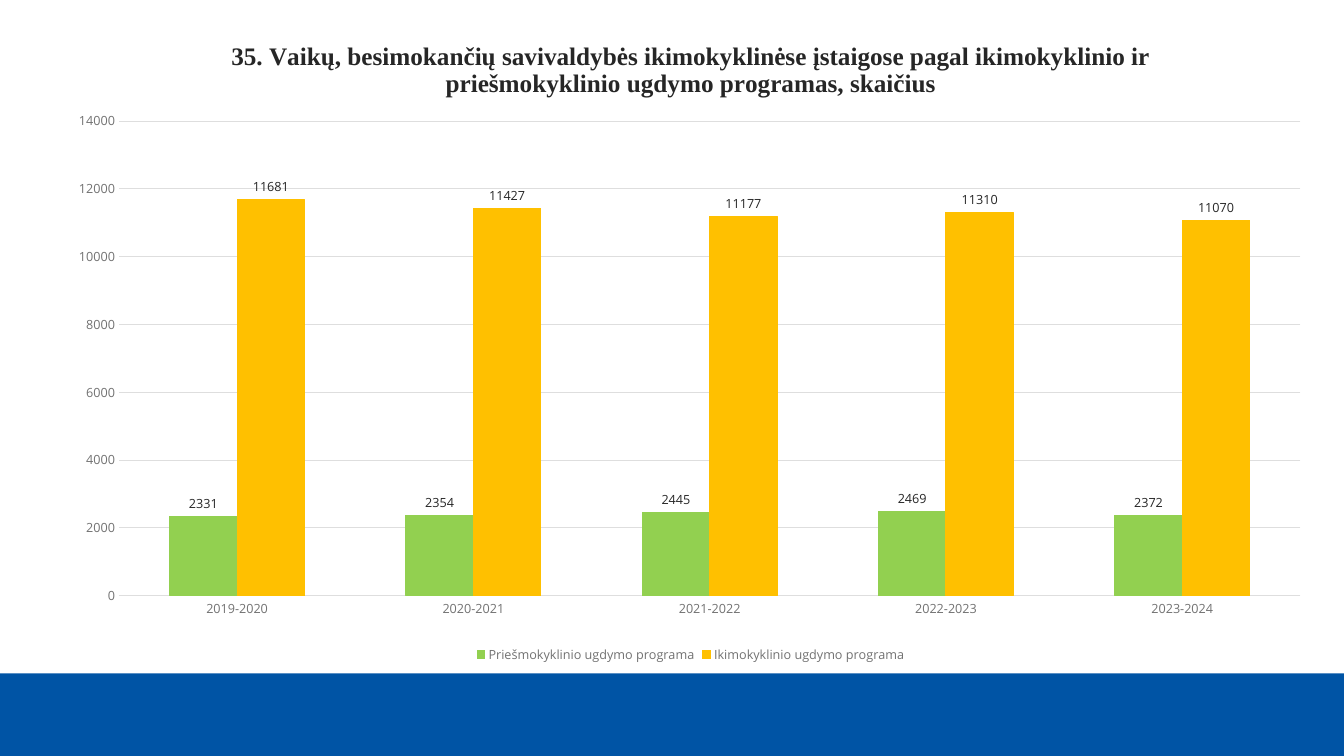
import pptx
import pptx.chart.data
import pptx.dml.color
import pptx.enum.chart
import pptx.enum.shapes
import pptx.oxml
import pptx.oxml.ns
import pptx.util

PX = 9144  # 100 px to the inch
PAGE_WIDTH, PAGE_HEIGHT = 1333, 750
BODY_FONT, TITLE_FONT = "Open Sans", "Times New Roman"
COLORS = {
    "band": "0054A5",
    "text": "262626",
    "muted": "727272",
    "grid": "DEDEDE",
    "preschool": "92D050",
    "nursery": "FFC000",
}
TITLE = ("35. Vaikų, besimokančių savivaldybės ikimokyklinėse įstaigose pagal "
         "ikimokyklinio ir priešmokyklinio ugdymo programas, skaičius")
YEARS = ["2019-2020", "2020-2021", "2021-2022", "2022-2023", "2023-2024"]
PROGRAMMES = [
    ("Priešmokyklinio ugdymo programa", "preschool", [2331, 2354, 2445, 2469, 2372]),
    ("Ikimokyklinio ugdymo programa", "nursery", [11681, 11427, 11177, 11310, 11070]),
]


def rgb(name):
    return pptx.dml.color.RGBColor.from_string(COLORS[name])


def to_emu(box):
    return [length * PX for length in box]


def style_font(font, size, color, name=BODY_FONT, bold=False):
    font.name, font.size, font.bold = name, pptx.util.Pt(size), bold
    font.color.rgb = rgb(color)


def style_line(line, color):
    line.color.rgb = rgb(color)
    line.width = pptx.util.Pt(0.75)


def place_plot(chart, x, y, w, h):
    """Fix the inner plot area at fractions of the chart box."""
    plot_area = chart.plots[0]._element.getparent()
    for old in plot_area.findall(pptx.oxml.ns.qn("c:layout")):
        plot_area.remove(old)
    plot_area.insert(0, pptx.oxml.parse_xml(
        f'<c:layout {pptx.oxml.ns.nsdecls("c")}><c:manualLayout>'
        '<c:layoutTarget val="inner"/><c:xMode val="edge"/><c:yMode val="edge"/>'
        f'<c:x val="{x}"/><c:y val="{y}"/><c:w val="{w}"/><c:h val="{h}"/>'
        '</c:manualLayout></c:layout>'))


def add_footer_band(page, box):
    band = page.shapes.add_shape(pptx.enum.shapes.MSO_SHAPE.RECTANGLE, *to_emu(box))
    band.shadow.inherit = False
    band.fill.solid()
    band.fill.fore_color.rgb = rgb("band")
    band.line.fill.background()


def style_axes(chart):
    for axis in (chart.category_axis, chart.value_axis):
        axis.major_tick_mark = axis.minor_tick_mark = pptx.enum.chart.XL_TICK_MARK.NONE
        style_font(axis.tick_labels.font, 9, "muted")
    style_line(chart.category_axis.format.line, "grid")
    values = chart.value_axis
    values.minimum_scale, values.maximum_scale, values.major_unit = 0, 14000, 2000
    values.format.line.fill.background()
    values.has_major_gridlines = True
    style_line(values.major_gridlines.format.line, "grid")


def add_programme_chart(page, box):
    data = pptx.chart.data.CategoryChartData()
    data.categories = YEARS
    for name, _, counts in PROGRAMMES:
        data.add_series(name, counts)
    chart = page.shapes.add_chart(
        pptx.enum.chart.XL_CHART_TYPE.COLUMN_CLUSTERED, *to_emu(box), data).chart
    style_font(chart.font, 10, "text")

    # Title
    chart.has_title = True
    chart.chart_title.include_in_layout = False
    para = chart.chart_title.text_frame.paragraphs[0]
    para.text = TITLE
    style_font(para.runs[0].font, 18, "text", TITLE_FONT, bold=True)

    # Legend
    chart.has_legend = True
    chart.legend.position = pptx.enum.chart.XL_LEGEND_POSITION.BOTTOM
    chart.legend.include_in_layout = False
    style_font(chart.legend.font, 9, "muted")

    # Columns and their labels
    plot = chart.plots[0]
    plot.gap_width, plot.overlap, plot.vary_by_categories = 150, 0, False
    for series, (_, color, _) in zip(plot.series, PROGRAMMES):
        series.format.fill.solid()
        series.format.fill.fore_color.rgb = rgb(color)
        style_line(series.format.line, color)
        labels = series.data_labels
        labels.show_value = True
        labels.position = pptx.enum.chart.XL_LABEL_POSITION.OUTSIDE_END
        style_font(labels.font, 9, "text")

    style_axes(chart)
    place_plot(chart, 0.05, 0.16, 0.93, 0.73)


def build_slide(deck):
    page = deck.slides.add_slide(deck.slide_layouts[6])
    add_footer_band(page, (0, 668, PAGE_WIDTH, PAGE_HEIGHT - 668))
    add_programme_chart(page, (55, 17, 1260, 645))


def main():
    deck = pptx.Presentation()
    deck.slide_width, deck.slide_height = to_emu((PAGE_WIDTH, PAGE_HEIGHT))
    build_slide(deck)
    deck.save("out.pptx")


if __name__ == "__main__":
    main()
